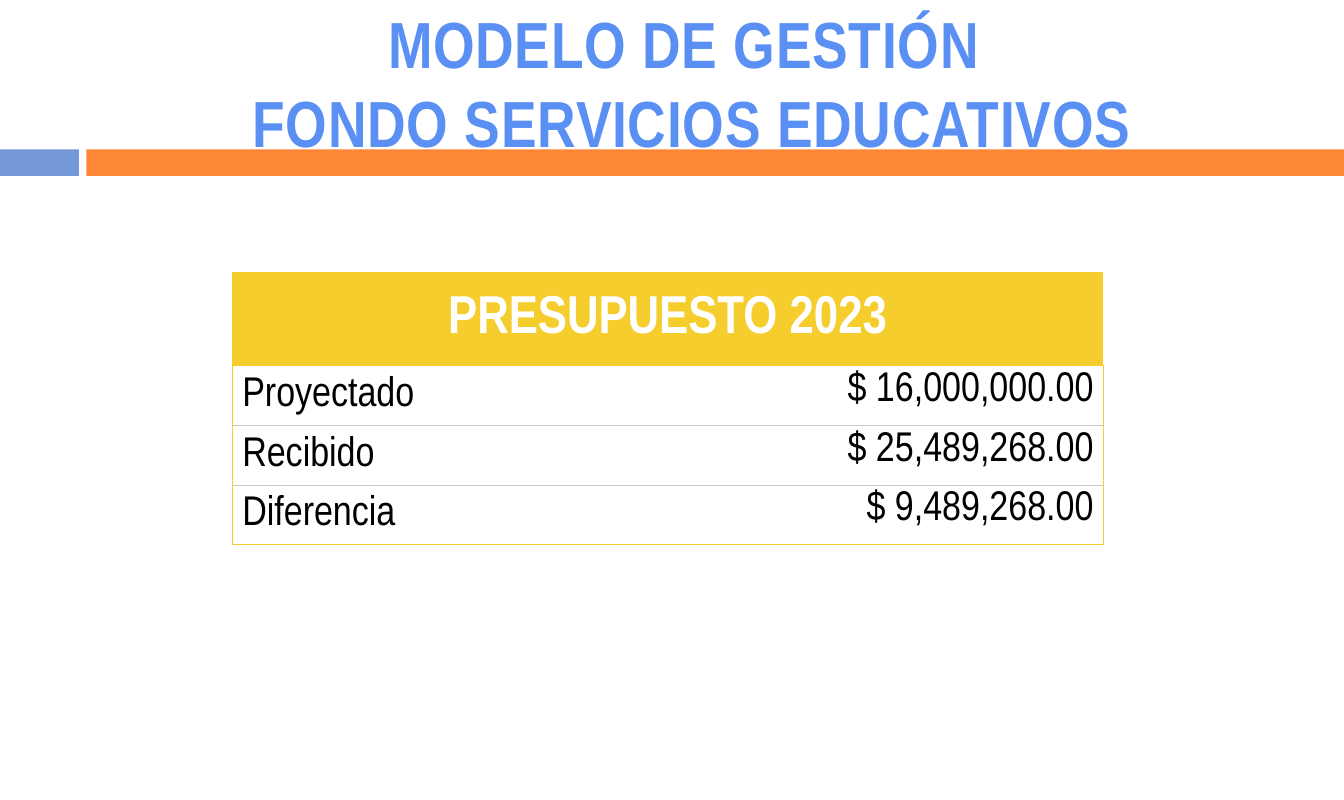
from dataclasses import dataclass

from lxml.etree import SubElement as Sub
from pptx import Presentation
from pptx.dml.color import RGBColor as Rgb
from pptx.enum.shapes import MSO_SHAPE as Kind
from pptx.enum.text import MSO_ANCHOR as Anchor
from pptx.enum.text import MSO_AUTO_SIZE as Fit
from pptx.enum.text import PP_ALIGN as Align
from pptx.oxml.ns import qn
from pptx.util import Cm, Pt


@dataclass(frozen=True)
class Theme:
    """Hold the colours, font and type sizes."""
    font: str = "Arial Narrow"
    blue: str = "7598D9"
    orange: str = "FE8637"
    title: str = "5A90F4"
    gold: str = "F5CD2D"
    grey: str = "C8C8C8"
    white: str = "FFFFFF"
    black: str = "000000"
    big: int = 44
    head: int = 36
    body: int = 28
    rule: float = 0.79


THEME = Theme()
TITLE = ("MODELO DE GESTIÓN ", "FONDO SERVICIOS EDUCATIVOS")
HEAD = "PRESUPUESTO 2023"
ROWS = (
    ("Proyectado", "$ 16,000,000.00"),
    ("Recibido", "$ 25,489,268.00"),
    ("Diferencia", "$ 9,489,268.00"),
)


def add_run(para, text, size, color, bold=False):
    """Add one styled run and return it."""
    run = para.add_run()
    run.text = text
    font = run.font
    font.name, font.size, font.bold = THEME.font, Pt(size), bold
    font.color.rgb = Rgb.from_string(color)
    return run


def add_bars(slide, left, top, width, height):
    """Draw the blue tab and the orange band across the box."""
    tab, gap = 1.88, 0.18
    start = tab + gap
    for x, wide, color in (
        (left, tab, THEME.blue),
        (left + start, width - start, THEME.orange),
    ):
        bar = slide.shapes.add_shape(
            Kind.RECTANGLE, Cm(x), Cm(top), Cm(wide), Cm(height))
        bar.shadow.inherit = False
        bar.fill.solid()
        bar.fill.fore_color.rgb = Rgb.from_string(color)
        bar.line.fill.background()


def add_title(slide, left, top, width, height):
    """Fill the title placeholder with its two centred lines."""
    title = slide.shapes.title
    title.left, title.top = Cm(left), Cm(top)
    title.width, title.height = Cm(width), Cm(height)
    frame = title.text_frame
    frame.word_wrap = True
    frame.auto_size = Fit.NONE
    frame.vertical_anchor = Anchor.MIDDLE
    para = frame.paragraphs[0]
    para.alignment = Align.CENTER
    for i, line in enumerate(TITLE):
        if i:
            para.add_line_break()
        run = add_run(para, line, THEME.big, THEME.title, True)
        run.font._element.set("spc", "50")


def add_edge(cell, side, color):
    """Rule one side of a cell, or clear it when there is no colour."""
    props = cell._tc.get_or_add_tcPr()
    line = Sub(props, qn(f"a:ln{side}"), w=str(Pt(THEME.rule)))
    if color:
        fill = Sub(line, qn("a:solidFill"))
        Sub(fill, qn("a:srgbClr"), val=color)
    else:
        Sub(line, qn("a:noFill"))


def style_cell(cell, row, col):
    """Set the edges, fill and margins by place in the grid."""
    last = len(ROWS)
    gold, grey = THEME.gold, THEME.grey
    add_edge(cell, "L", gold if col == 0 else None)
    add_edge(cell, "R", gold if col == 1 else None)
    add_edge(cell, "T", gold if row <= 1 else grey)
    add_edge(cell, "B", gold if row in (0, last) else grey)
    if row == 0:
        cell.fill.solid()
        cell.fill.fore_color.rgb = Rgb.from_string(gold)
    else:
        cell.fill.background()
    cell.margin_left = cell.margin_right = Cm(0.24)
    cell.margin_top = cell.margin_bottom = Cm(0.13)
    top = row > 0 and col == 1
    cell.vertical_anchor = Anchor.TOP if top else Anchor.MIDDLE


def add_budget(slide, left, top, width, height):
    """Build the budget table with a merged heading row."""
    tall = 2.21
    count = len(ROWS) + 1
    table = slide.shapes.add_table(
        count, 2, Cm(left), Cm(top), Cm(width), Cm(height)).table
    table.first_row = table.horz_banding = False
    for i, row in enumerate(table.rows):
        row.height = Cm((height - tall) / len(ROWS) if i else tall)
    for i in range(count):
        for j in range(2):
            style_cell(table.cell(i, j), i, j)
    head = table.cell(0, 0)
    head.merge(table.cell(0, 1))
    para = head.text_frame.paragraphs[0]
    para.alignment = Align.CENTER
    add_run(para, HEAD, THEME.head, THEME.white, True)
    for i, texts in enumerate(ROWS, 1):
        for j, text in enumerate(texts):
            para = table.cell(i, j).text_frame.paragraphs[0]
            para.alignment = Align.RIGHT if j else Align.LEFT
            add_run(para, text, THEME.body, THEME.black)


def main():
    """Build and save the slide."""
    deck = Presentation()
    deck.slide_width, deck.slide_height = Cm(32), Cm(19.05)
    slide = deck.slides.add_slide(deck.slide_layouts[5])
    add_bars(slide, 0, 3.56, 32, 0.63)
    add_title(slide, 2.08, 0.36, 28.8, 3.18)
    add_budget(slide, 5.53, 6.5, 20.74, 6.47)
    deck.save("out.pptx")


if __name__ == "__main__":
    main()
